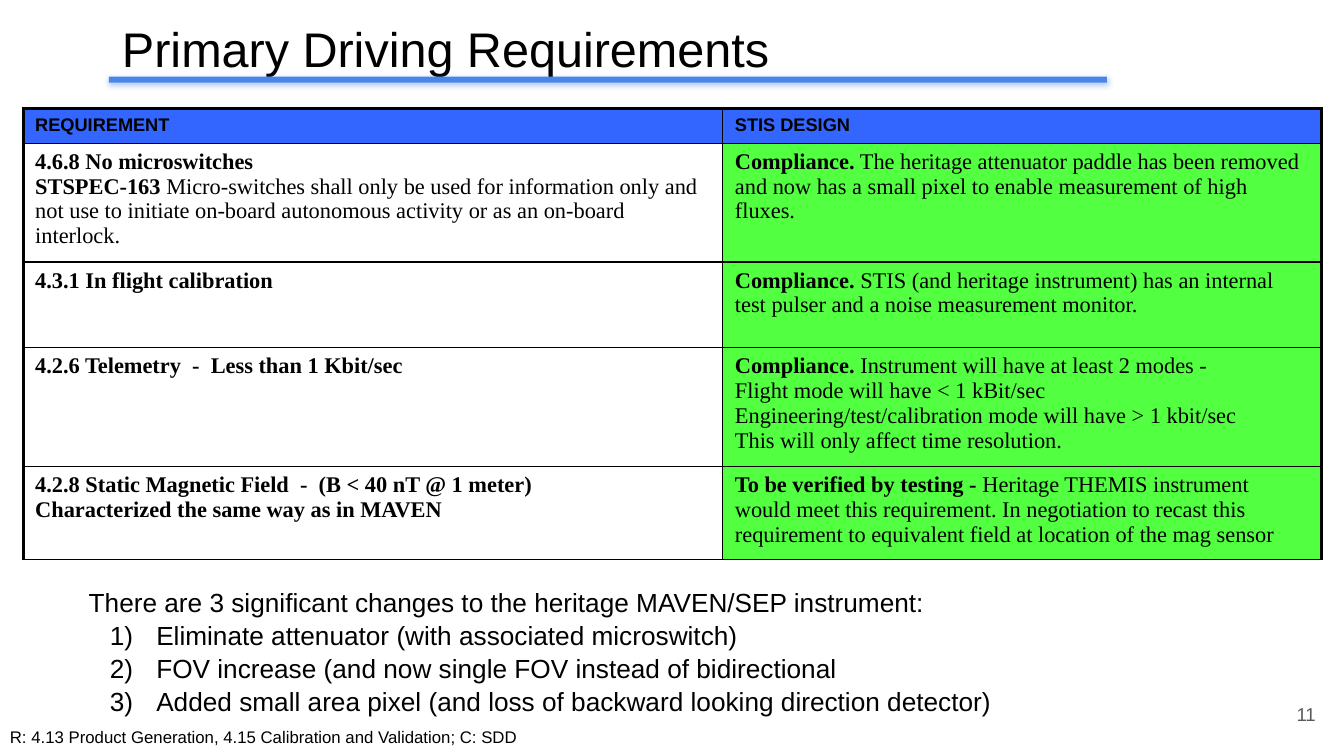
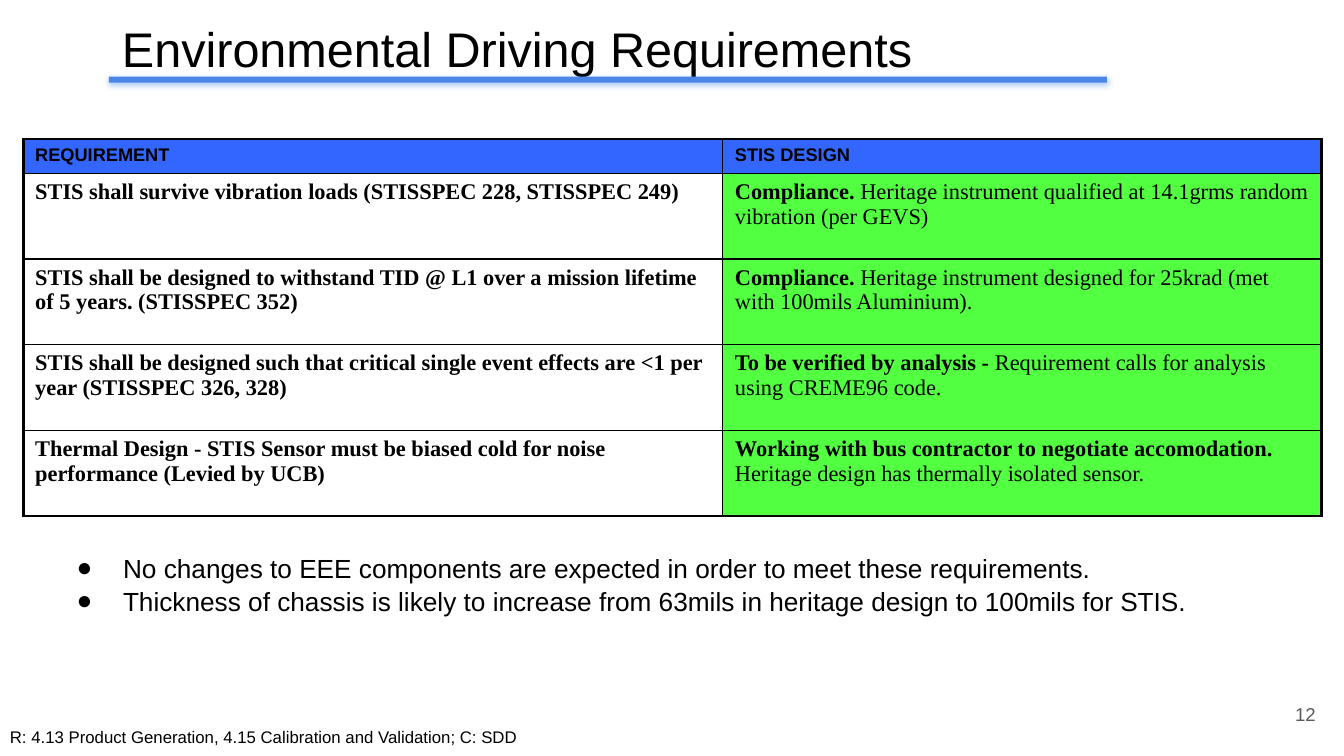
from lxml.etree import SubElement
from pptx import Presentation
from pptx.dml.color import RGBColor
from pptx.enum.shapes import MSO_SHAPE
from pptx.enum.text import MSO_ANCHOR, MSO_AUTO_SIZE, PP_ALIGN
from pptx.oxml.ns import qn
from pptx.util import Inches, Pt

BLACK = "000000"
GREY = "595959"
RULE_BLUE = "4A86E8"
HEADER_BLUE = "3366FF"
STATUS_GREEN = "52FF41"
SANS = "Arial"
SERIF = "Times New Roman"

TITLE_FORMAT = {"name": SANS, "size": Pt(34.7)}
LIST_FORMAT = {"name": SANS, "size": Pt(18.7)}
HEADER_FORMAT = {"name": SANS, "size": Pt(13), "bold": True}
CELL_FORMAT = {"name": SERIF, "size": Pt(16)}
FOOTER_FORMAT = {"name": SANS, "size": Pt(12)}
NUMBER_FORMAT = {"name": SANS, "size": Pt(13.3)}

NUMBERED = ("a:buAutoNum", {"type": "arabicParenR"})
BULLETED = ("a:buChar", {"char": "●"})
PLAIN = ("a:buNone", {})

HEADINGS = ("REQUIREMENT", "STIS DESIGN")
COLUMN_WIDTHS = (6.94, 5.94)
TABLE_LEFT = 0.23
HEADER_HEIGHT = 0.34
THIN, THICK = 1, 2.25
FOOTER = "R: 4.13 Product Generation, 4.15 Calibration and Validation; C: SDD"

# Each cell is a list of paragraphs, each a (bold part, regular part) pair.
PRIMARY_ROWS = [
    (1.18,
     [("4.6.8 No microswitches", ""),
      ("STSPEC-163 ", "Micro-switches shall only be used for information only and not use "
                      "to initiate on-board autonomous activity or as an on-board interlock.")],
     [("Compliance.", " The heritage attenuator paddle has been removed and now has a small "
                      "pixel to enable measurement of high fluxes.")]),
    (0.85,
     [("4.3.1 In flight calibration", "")],
     [("Compliance.", " STIS (and heritage instrument) has an internal test pulser and a "
                      "noise measurement monitor.")]),
    (1.18,
     [("4.2.6 Telemetry  -  Less than 1 Kbit/sec", "")],
     [("Compliance. ", "Instrument will have at least 2 modes -"),
      ("", "Flight mode will have < 1 kBit/sec"),
      ("", "Engineering/test/calibration mode will have > 1 kbit/sec"),
      ("", "This will only affect time resolution.")]),
    (0.92,
     [("4.2.8 Static Magnetic Field  -  (B < 40 nT @ 1 meter)", ""),
      ("Characterized the same way as in MAVEN", "")],
     [("To be verified by testing - ", "Heritage THEMIS instrument would meet this requirement. "
                                       "In negotiation to recast this requirement to equivalent "
                                       "field at location of the mag sensor")]),
]
ENVIRONMENTAL_ROWS = [
    (0.85,
     [("STIS shall survive vibration loads (STISSPEC 228, STISSPEC 249)", "")],
     [("Compliance.", " Heritage instrument qualified at 14.1grms random vibration (per GEVS)")]),
    (0.85,
     [("STIS shall be designed to withstand TID @ L1 over a mission lifetime of 5 years. "
       "(STISSPEC 352)", "")],
     [("Compliance.", " Heritage instrument designed for 25krad (met with 100mils Aluminium).")]),
    (0.85,
     [("STIS shall be designed such that critical single event effects are <1 per year "
       "(STISSPEC 326, 328)", "")],
     [("To be verified by analysis - ", "Requirement calls for analysis using CREME96 code.")]),
    (0.85,
     [("Thermal Design - STIS Sensor must be biased cold for noise performance "
       "(Levied by UCB)", "")],
     [("Working with bus contractor to negotiate accomodation.", ""),
      ("", "Heritage design has thermally isolated sensor.")]),
]
PRIMARY_NOTES = [
    (PLAIN, "There are 3 significant changes to the heritage MAVEN/SEP instrument:"),
    (NUMBERED, "Eliminate attenuator (with associated microswitch)"),
    (NUMBERED, "FOV increase (and now single FOV instead of bidirectional"),
    (NUMBERED, "Added small area pixel (and loss of backward looking direction detector)"),
]
ENVIRONMENTAL_NOTES = [
    (BULLETED, "No changes to EEE components are expected in order to meet these requirements."),
    (BULLETED, "Thickness of chassis is likely to increase from 63mils in heritage design to "
               "100mils for STIS."),
]


def color(hex_text):
    return RGBColor.from_string(hex_text)


def add_hex_color(parent, hex_text):
    return SubElement(parent, qn("a:srgbClr"), val=hex_text)


def add_alpha(color_element, percent):
    SubElement(color_element, qn("a:alpha"), val=str(percent * 1000))


def apply_format(font, values, hex_text=BLACK):
    for name, value in values.items():
        setattr(font, name, value)
    font.color.rgb = color(hex_text)


def add_span(para, text, values, hex_text=BLACK):
    span = para.add_run()
    span.text = text
    apply_format(span.font, values, hex_text)


def next_paragraph(frame, index):
    return frame.add_paragraph() if index else frame.paragraphs[0]


def place(shape, left, top, width, height):
    shape.left, shape.top = Inches(left), Inches(top)
    shape.width, shape.height = Inches(width), Inches(height)


def set_frame(frame, inset, anchor=MSO_ANCHOR.TOP):
    frame.word_wrap = True
    frame.auto_size = MSO_AUTO_SIZE.NONE
    frame.vertical_anchor = anchor
    for side in ("left", "top", "right", "bottom"):
        setattr(frame, f"margin_{side}", Inches(inset))


def add_title(page, text):
    title = page.shapes.title
    place(title, 1.08, -0.02, 10.2, 0.78)
    set_frame(title.text_frame, 0.13)
    para = title.text_frame.paragraphs[0]
    para.alignment = PP_ALIGN.LEFT
    para.line_spacing = 1.13
    add_span(para, text, TITLE_FORMAT)


def add_title_rule(page):
    """Draw the blue bar under the title with its soft shadow."""
    rule = page.shapes.add_shape(MSO_SHAPE.RECTANGLE, Inches(1.08), Inches(0.76),
                                 Inches(9.9), Inches(0.06))
    rule.fill.solid()
    rule.fill.fore_color.rgb = color(RULE_BLUE)
    rule.line.fill.background()
    rule.shadow.inherit = False
    effects = rule.element.spPr.find(qn("a:effectLst"))
    shadow = SubElement(effects, qn("a:outerShdw"), blurRad=str(Pt(4.5)), dist=str(Pt(1.5)),
                        dir=str(90 * 60000), algn="bl", rotWithShape="0")
    add_alpha(add_hex_color(shadow, RULE_BLUE), 48)


def add_footer(page):
    box = page.shapes.add_textbox(0, Inches(7.16), Inches(5.33), Inches(0.3))
    box.text_frame.word_wrap = False
    box.text_frame.auto_size = MSO_AUTO_SIZE.SHAPE_TO_FIT_TEXT
    add_span(box.text_frame.paragraphs[0], FOOTER, FOOTER_FORMAT)


def add_page_number(page, number):
    box = page.shapes.add_textbox(Inches(12.35), Inches(6.8), Inches(0.8), Inches(0.57))
    set_frame(box.text_frame, 0.1, MSO_ANCHOR.MIDDLE)
    para = box.text_frame.paragraphs[0]
    para.alignment = PP_ALIGN.RIGHT
    add_span(para, str(number), NUMBER_FORMAT, GREY)


def set_borders(cell, widths):
    properties = cell._tc.get_or_add_tcPr()
    for side, width in widths.items():
        line = SubElement(properties, qn(f"a:ln{side}"), w=str(Pt(width)))
        add_hex_color(SubElement(line, qn("a:solidFill")), BLACK)


def fill_cell(cell, hex_text, opacity=100):
    if hex_text is None:
        cell.fill.background()
        return
    cell.fill.solid()
    cell.fill.fore_color.rgb = color(hex_text)
    if opacity < 100:
        add_alpha(cell._tc.tcPr.find(f".//{qn('a:srgbClr')}"), opacity)


def format_cell(cell, row, column):
    cell.margin_left = cell.margin_right = Inches(0.12)
    cell.margin_top = cell.margin_bottom = Inches(0.06)
    set_borders(cell, {
        "L": THIN if column else THICK,
        "R": THICK if column else THIN,
        "T": THIN if row else THICK,
        "B": THIN,
    })
    if row == 0:
        fill_cell(cell, HEADER_BLUE)
    else:
        fill_cell(cell, STATUS_GREEN if column else None, 93)


def write_cell(cell, paragraphs, values):
    for index, parts in enumerate(paragraphs):
        para = next_paragraph(cell.text_frame, index)
        for text, bold in zip(parts, (True, False)):
            if text:
                add_span(para, text, {**values, "bold": bold})


def add_requirements_table(page, top, rows):
    heights = [HEADER_HEIGHT] + [height for height, *_ in rows]
    frame = page.shapes.add_table(len(heights), len(COLUMN_WIDTHS), Inches(TABLE_LEFT),
                                  Inches(top), Inches(sum(COLUMN_WIDTHS)), Inches(sum(heights)))
    table = frame.table
    table.horz_banding = False
    for column, width in zip(table.columns, COLUMN_WIDTHS):
        column.width = Inches(width)
    contents = [[[(heading, "")] for heading in HEADINGS]] + [cells for _, *cells in rows]
    for row, (height, cells) in enumerate(zip(heights, contents)):
        table.rows[row].height = Inches(height)
        for column, paragraphs in enumerate(cells):
            cell = table.cell(row, column)
            format_cell(cell, row, column)
            write_cell(cell, paragraphs, CELL_FORMAT if row else HEADER_FORMAT)


def set_marker(para, marker):
    tag, attributes = marker
    left, indent = (0, 0) if marker is PLAIN else (0.67, -0.46)
    properties = para._p.get_or_add_pPr()
    properties.set("marL", str(Inches(left)))
    properties.set("indent", str(Inches(indent)))
    add_hex_color(SubElement(properties, qn("a:buClr")), BLACK)
    SubElement(properties, qn("a:buFont"), typeface=SANS)
    SubElement(properties, qn(tag), attributes)


def add_notes_list(page, area, items):
    body = page.placeholders[1]
    place(body, *area)
    set_frame(body.text_frame, 0.13)
    for index, (marker, text) in enumerate(items):
        para = next_paragraph(body.text_frame, index)
        set_marker(para, marker)
        para.space_before = Pt(0)
        para.line_spacing = 1.05
        add_span(para, text, LIST_FORMAT)


def add_page(deck, number, title, table_top, rows, list_area, items):
    page = deck.slides.add_slide(deck.slide_layouts[1])
    add_title_rule(page)
    add_title(page, title)
    add_requirements_table(page, table_top, rows)
    add_notes_list(page, list_area, items)
    add_footer(page)
    add_page_number(page, number)


def main():
    deck = Presentation()
    deck.slide_width, deck.slide_height = Inches(13.33), Inches(7.5)
    add_page(deck, 11, "Primary Driving Requirements", 1.08, PRIMARY_ROWS,
             (0.75, 5.67, 10.71, 1.56), PRIMARY_NOTES)
    add_page(deck, 12, "Environmental Driving Requirements", 1.38, ENVIRONMENTAL_ROWS,
             (0.42, 5.33, 12.04, 1.86), ENVIRONMENTAL_NOTES)
    deck.save("out.pptx")


if __name__ == "__main__":
    main()
